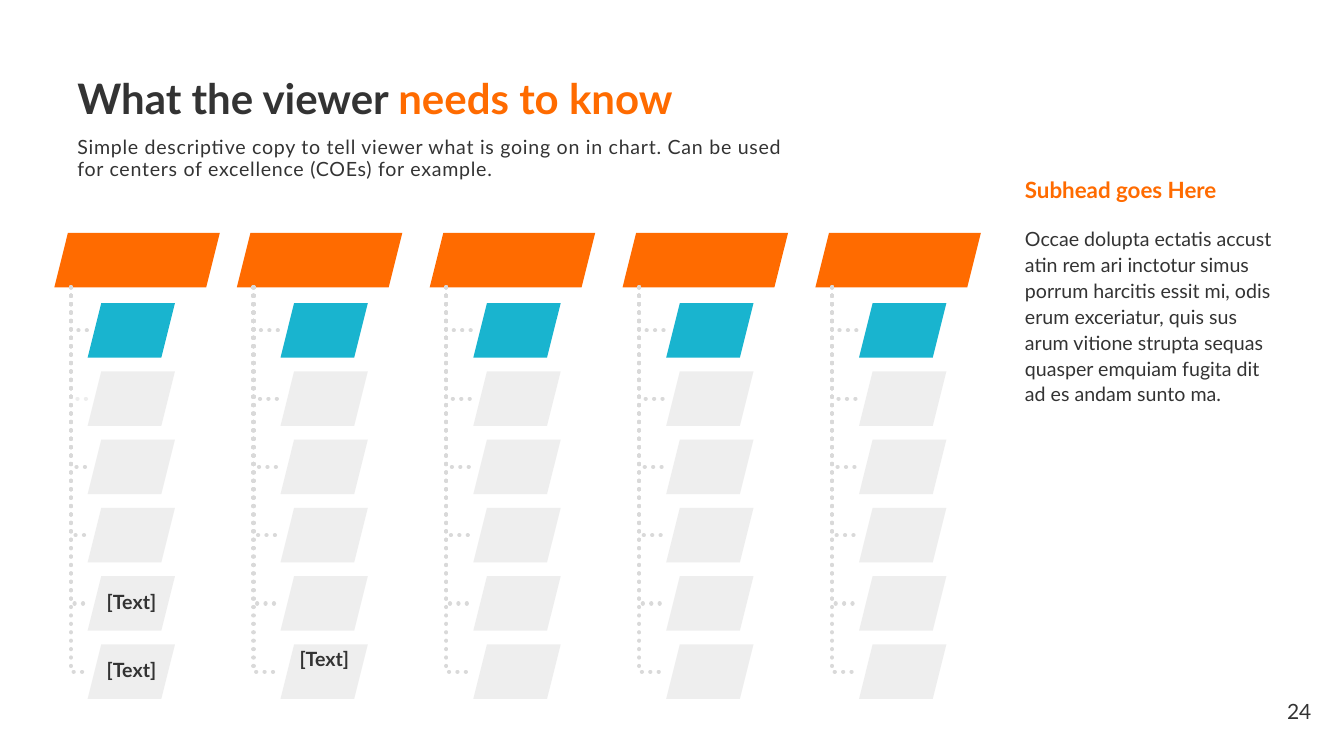
from lxml.etree import SubElement
from pptx import Presentation
from pptx.dml.color import RGBColor
from pptx.enum.dml import MSO_LINE
from pptx.enum.shapes import MSO_SHAPE
from pptx.enum.text import MSO_ANCHOR, PP_ALIGN
from pptx.oxml.ns import qn
from pptx.util import Cm, Pt

INK = RGBColor(0x33, 0x33, 0x33)
ORANGE = RGBColor(0xFF, 0x6B, 0x00)
TEAL = RGBColor(0x00, 0xAC, 0xCA)
PALE = RGBColor(0xED, 0xED, 0xED)
DOTS = RGBColor(0xD9, 0xD9, 0xD9)

# Content: text pieces are (wording, colour)
TITLE = [("What the viewer ", INK), ("needs to know", ORANGE)]
INTRO = [("Simple descriptive copy to tell viewer what is going on in chart. "
          "Can be used for centers of excellence (COEs) for example.", INK)]
SUBHEAD = [("Subhead goes Here", ORANGE)]
SIDE_COPY = [("Occae dolupta ectatis accust atin rem ari inctotur simus porrum "
              "harcitis essit mi, odis erum exceriatur, quis sus arum vitione "
              "strupta sequas quasper emquiam fugita dit ad es andam sunto ma.", INK)]
PAGE_NUMBER = [("24", INK)]
# (column, row): (wording, upward shift in cm)
LABELS = {(0, 4): ("[Text]", 0), (0, 5): ("[Text]", 0), (1, 5): ("[Text]", 0.3)}

# Layout in cm
COLUMNS, ROWS = 5, 6
TILE_LEFT, TILE_TOP, TILE_WIDTH = 2.21, 7.64, 2.2
COLUMN_STEP, ROW_STEP = 4.86, 1.72
HEADER_TOP, HEADER_WIDTH, BAND_HEIGHT = 5.87, 4.17, 1.37
FIRST_HEADER_OFFSET, HEADER_OFFSET, SPINE_INSET = 0.84, 1.1, 0.42

# Text formats
TITLE_FONT = {"size": Pt(30), "bold": True}
SUBHEAD_FONT = {"size": Pt(16), "bold": True}
LABEL_FONT = {"size": Pt(14), "bold": True}
COPY_FONT = {"size": Pt(14)}
NUMBER_FONT = {"size": Pt(15)}
TIGHT = {"line_spacing": 0.9}
OPEN = {"line_spacing": 1.1}
CENTRED = {"line_spacing": 0.9, "alignment": PP_ALIGN.CENTER}
RIGHT = {"alignment": PP_ALIGN.RIGHT}
MIDDLE = {"vertical_anchor": MSO_ANCHOR.MIDDLE}
LABEL_FRAME = {**MIDDLE, "margin_left": Cm(0.08), "margin_right": Cm(0.08),
               "margin_top": Cm(0.05), "margin_bottom": Cm(0.05)}


def apply(target, values):
    for name, value in values.items():
        setattr(target, name, value)


def add_text(page, place, pieces, font, para_format, frame_format=None, tracking=None):
    box = page.shapes.add_textbox(*map(Cm, place))
    frame = box.text_frame
    apply(frame, {"word_wrap": True, **(frame_format or {})})
    para = frame.paragraphs[0]
    apply(para, para_format)
    for wording, colour in pieces:
        span = para.add_run()
        span.text = wording
        apply(span.font, {"name": "Lato", **font})
        span.font.color.rgb = colour
        if tracking:
            span.font._element.set("spc", str(tracking))


def add_band(page, left, top, width, colour, opacity=None):
    band = page.shapes.add_shape(MSO_SHAPE.PARALLELOGRAM,
                                 *map(Cm, (left, top, width, BAND_HEIGHT)))
    band.shadow.inherit = False
    band.fill.solid()
    band.fill.fore_color.rgb = colour
    band.line.fill.background()
    if opacity:
        tint = band.element.spPr.find(qn("a:solidFill"))[0]
        SubElement(tint, qn("a:alpha")).set("val", str(opacity * 1000))


def add_branch(page, spine, top, middle, tile, colour):
    outline = page.shapes.build_freeform(Cm(spine), Cm(top))
    outline.add_line_segments([(Cm(spine), Cm(middle)), (Cm(tile), Cm(middle))],
                              close=False)
    branch = outline.convert_to_shape()
    branch.shadow.inherit = False
    branch.fill.background()
    branch.line.color.rgb = colour
    apply(branch.line, {"width": Pt(3), "dash_style": MSO_LINE.ROUND_DOT})
    branch.element.spPr.find(qn("a:ln")).set("cap", "rnd")


def add_column(page, column):
    tile = TILE_LEFT + column * COLUMN_STEP
    header = tile - (HEADER_OFFSET if column else FIRST_HEADER_OFFSET)
    add_band(page, header, HEADER_TOP, HEADER_WIDTH, ORANGE)
    for row in range(ROWS):
        top = TILE_TOP + row * ROW_STEP
        add_branch(page, header + SPINE_INSET, HEADER_TOP + BAND_HEIGHT,
                   top + BAND_HEIGHT / 2, tile,
                   PALE if (column, row) == (0, 1) else DOTS)
        add_band(page, tile, top, TILE_WIDTH, PALE if row else TEAL, 90)
        if (column, row) in LABELS:
            wording, shift = LABELS[column, row]
            add_text(page, (tile + 0.33, top + 0.2 - shift, 1.55, 0.97),
                     [(wording, INK)], LABEL_FONT, CENTRED, LABEL_FRAME)


def main():
    deck = Presentation()
    apply(deck, {"slide_width": Cm(33.87), "slide_height": Cm(19.05)})
    page = deck.slides.add_slide(deck.slide_layouts[6])

    # Heading
    add_text(page, (31.04, 17.48, 2.26, 0.89), PAGE_NUMBER, NUMBER_FONT, RIGHT)
    add_text(page, (1.7, 1.42, 24.94, 2.26), TITLE, TITLE_FONT, TIGHT, MIDDLE)
    add_text(page, (1.7, 3.35, 18.57, 1.57), INTRO, COPY_FONT, TIGHT, tracking=50)

    # Chart of columns
    for column in range(COLUMNS):
        add_column(page, column)

    # Side text
    add_text(page, (25.58, 4.39, 7.37, 1.07), SUBHEAD, SUBHEAD_FONT, TIGHT)
    add_text(page, (25.58, 5.54, 6.83, 10.36), SIDE_COPY, COPY_FONT, OPEN)

    deck.save("out.pptx")


if __name__ == "__main__":
    main()
